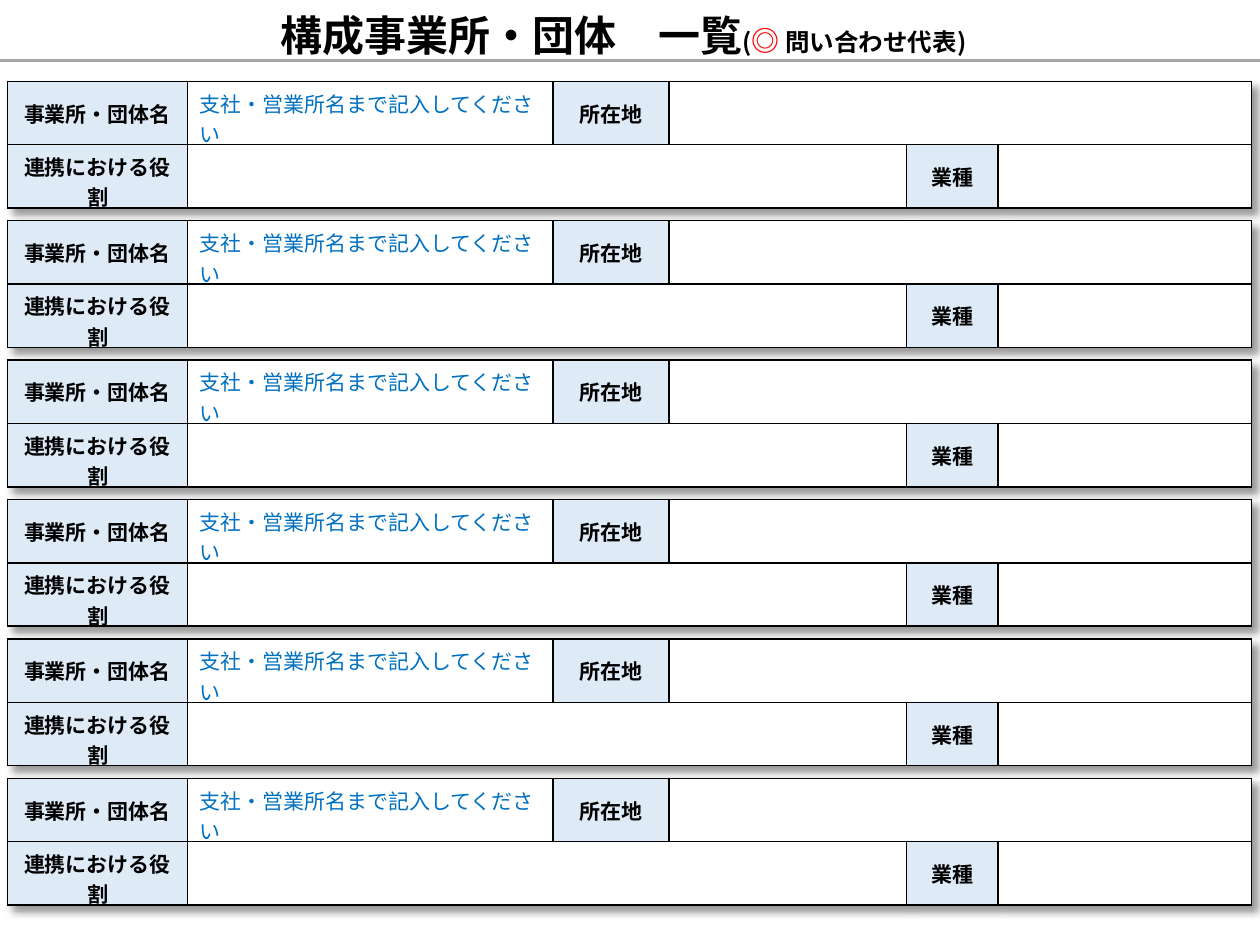
from lxml import etree
from pptx import Presentation
from pptx.dml.color import RGBColor
from pptx.enum.shapes import MSO_CONNECTOR
from pptx.enum.text import MSO_ANCHOR, PP_ALIGN
from pptx.oxml.ns import qn
from pptx.util import Cm, Pt

STRAIGHT = MSO_CONNECTOR.STRAIGHT
MIDDLE = MSO_ANCHOR.MIDDLE
LEFT, CENTER = PP_ALIGN.LEFT, PP_ALIGN.CENTER

FONT = "Noto Sans CJK JP"
COLORS = {
    "text": "000000",
    "mark": "FF0000",
    "hint": "0070C0",
    "rule": "A6A6A6",
    "label": "DEEBF7",
    "entry": "FFFFFF",
}


def write(paragraph, text, size=12, color="text", bold=True, align=CENTER):
    paragraph.alignment = align
    run = paragraph.add_run()
    run.text = text
    run.font.size = Pt(size)
    run.font.bold = bold
    run.font.name = FONT
    run.font.color.rgb = RGBColor.from_string(COLORS[color])
    # Japanese glyphs take the East Asian typeface
    etree.SubElement(run.font._element, qn("a:ea"), typeface=FONT)


def style_cell(cell, fill):
    """Give a cell thin black borders, margins and a solid fill."""
    properties = cell._tc.get_or_add_tcPr()
    for side in ("lnL", "lnR", "lnT", "lnB"):
        border = etree.SubElement(properties, qn(f"a:{side}"), w=str(Pt(1)))
        solid = etree.SubElement(border, qn("a:solidFill"))
        etree.SubElement(solid, qn("a:srgbClr"), val=COLORS["text"])
    cell.fill.solid()
    cell.fill.fore_color.rgb = RGBColor.from_string(COLORS[fill])
    cell.vertical_anchor = MIDDLE
    cell.margin_left = cell.margin_right = Cm(0.24)
    cell.margin_top = cell.margin_bottom = Cm(0.13)


prs = Presentation()
prs.slide_width, prs.slide_height = Cm(25.4), Cm(19.05)
slide = prs.slides.add_slide(prs.slide_layouts[6])

# Heading
heading = slide.shapes.add_textbox(Cm(0.23), Cm(0.15), Cm(25.17), Cm(1.22)).text_frame
heading.word_wrap = True
heading.vertical_anchor = MIDDLE
title = heading.paragraphs[0]
title.line_spacing = 0.9
write(title, "構成事業所・団体　一覧", size=24)
write(title, "(", size=14)
write(title, "◎", size=16, color="mark")
write(title, " 問い合わせ代表)　", size=14)

rule = slide.shapes.add_connector(STRAIGHT, 0, Cm(1.22), prs.slide_width, Cm(1.22))
rule.line.color.rgb = RGBColor.from_string(COLORS["rule"])
rule.line.width = Pt(2.25)
etree.SubElement(rule._element.spPr, qn("a:effectLst"))

# One two-row entry form per member organisation
MEMBERS = 6
FIRST_TOP, PITCH = 1.64, 2.81
COLUMN_WIDTHS = (3.63, 7.37, 2.34, 4.78, 1.85, 5.11)
ROW_HEIGHTS = (1.09, 1.07)
LABELS = {
    (0, 0): "事業所・団体名",
    (0, 2): "所在地",
    (1, 0): "連携における役割",
    (1, 4): "業種",
}
HINT = "支社・営業所名まで記入してください"

for member in range(MEMBERS):
    frame = slide.shapes.add_table(
        len(ROW_HEIGHTS), len(COLUMN_WIDTHS), Cm(0.15), Cm(FIRST_TOP + member * PITCH),
        Cm(sum(COLUMN_WIDTHS)), Cm(sum(ROW_HEIGHTS)))
    form = frame.table
    form.first_row = form.horz_banding = False
    for column, width in zip(form.columns, COLUMN_WIDTHS):
        column.width = Cm(width)
    for row, height in zip(form.rows, ROW_HEIGHTS):
        row.height = Cm(height)

    for r in range(len(ROW_HEIGHTS)):
        for c in range(len(COLUMN_WIDTHS)):
            style_cell(form.cell(r, c), "label" if (r, c) in LABELS else "entry")
    form.cell(0, 3).merge(form.cell(0, 5))
    form.cell(1, 1).merge(form.cell(1, 3))

    for (r, c), label in LABELS.items():
        write(form.cell(r, c).text_frame.paragraphs[0], label)
    write(form.cell(0, 1).text_frame.paragraphs[0], HINT,
          color="hint", bold=False, align=LEFT)

    # Soft shadow to the lower right of the form
    effects = etree.Element(qn("a:effectLst"))
    shadow = etree.SubElement(
        effects, qn("a:outerShdw"), blurRad=str(Pt(4)), dist=str(Pt(4)),
        dir="2700000", algn="tl", rotWithShape="0")
    tint = etree.SubElement(shadow, qn("a:srgbClr"), val=COLORS["text"])
    etree.SubElement(tint, qn("a:alpha"), val="40000")
    form._tbl.tblPr.insert(0, effects)

prs.save("out.pptx")
